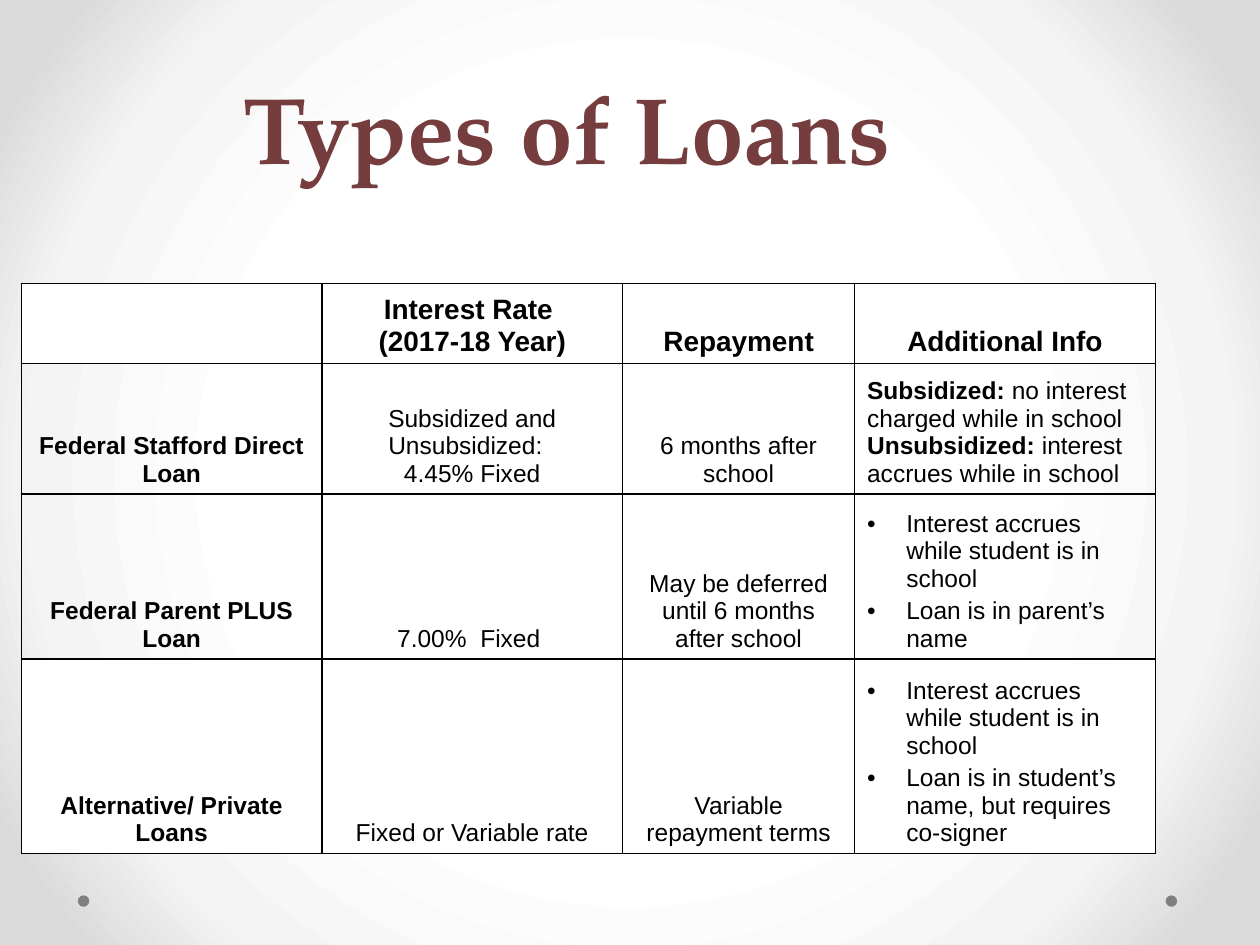
from lxml.etree import SubElement
from pptx import Presentation
from pptx.dml.color import RGBColor
from pptx.enum.shapes import MSO_SHAPE as Preset
from pptx.enum.text import MSO_ANCHOR as Anchor, PP_ALIGN as Align
from pptx.oxml import parse_xml
from pptx.oxml.ns import nsdecls, qn
from pptx.util import Cm, Pt

BLACK = RGBColor(0x00, 0x00, 0x00)
WHITE = RGBColor(0xFF, 0xFF, 0xFF)
MAROON = RGBColor(0x75, 0x3D, 0x3D)
GRAY = RGBColor(0x80, 0x80, 0x80)
PALE_GRAY = RGBColor(0xF4, 0xF4, 0xF4)
EDGE_GRAY = RGBColor(0xDA, 0xDA, 0xDA)

BACKGROUND_STOPS = [(0, WHITE), (50, WHITE), (76, PALE_GRAY), (92, EDGE_GRAY), (100, EDGE_GRAY)]
TITLE_FONT = {"name": "TeX Gyre Pagella", "size": Pt(54), "bold": True}
HEADER_FONT = {"name": "Arial", "size": Pt(16), "bold": True}
LABEL_FONT = {"name": "Arial", "size": Pt(14), "bold": True}
BODY_FONT = {"name": "Arial", "size": Pt(14), "bold": False}
CELL_FORMAT = {
    "vertical_anchor": Anchor.BOTTOM,
    "margin_left": Cm(0.25),
    "margin_right": Cm(0.25),
    "margin_top": Cm(0.13),
    "margin_bottom": Cm(0.13),
}

COLUMN_WIDTHS = [6.06, 6.06, 4.68, 6.06]
ROW_HEIGHTS = [1.51, 2.62, 3.12, 3.68]
FILLED_ROWS = (0, 3)
HEADERS = ["", "Interest Rate \n(2017-18 Year)", "Repayment", "Additional Info"]
LOANS = [
    ["Federal Stafford Direct Loan", "Subsidized and Unsubsidized:  \n4.45% Fixed",
     "6 months after school"],
    ["Federal Parent PLUS Loan", "7.00%  Fixed ", "May be deferred until 6 months after school"],
    ["Alternative/ Private Loans", "Fixed or Variable rate", "Variable repayment terms"],
]
STAFFORD_INFO = [
    ("Subsidized: ", LABEL_FONT),
    ("no interest charged while in school ", BODY_FONT),
    ("Unsubsidized:", LABEL_FONT),
    (" interest accrues while in school", BODY_FONT),
]
BULLETED_INFO = {
    2: ["Interest accrues while student is in school", "Loan is in parent’s name"],
    3: ["Interest accrues while student is in school",
        "Loan is in student’s name, but requires co-signer"],
}


def set_format(target, values):
    for name, value in values.items():
        setattr(target, name, value)


def add_text(paragraph, text, font, color=BLACK):
    for index, line in enumerate(text.split("\n")):
        if index:
            paragraph.add_line_break()
        run = paragraph.add_run()
        run.text = line
        set_format(run.font, font)
        run.font.color.rgb = color


def add_bullet(paragraph):
    paragraph.space_before = Pt(2.8)
    properties = paragraph._p.get_or_add_pPr()
    properties.set("marL", str(Cm(0.79)))
    properties.set("indent", str(-Cm(0.79)))
    SubElement(properties, qn("a:buFont")).set("typeface", "Arial")
    SubElement(properties, qn("a:buChar")).set("char", "•")


def add_borders(cell):
    properties = cell._tc.get_or_add_tcPr()
    for index, side in enumerate(("lnL", "lnR", "lnT", "lnB")):
        properties.insert(index, parse_xml(
            f'<a:{side} {nsdecls("a")} w="{Pt(1)}"><a:solidFill>'
            f'<a:srgbClr val="{BLACK}"/></a:solidFill></a:{side}>'))


def set_background(slide):
    slide.background.fill.solid()
    solid = slide.element.find(".//" + qn("p:bgPr"))[0]
    stops = "".join(f'<a:gs pos="{position * 1000}"><a:srgbClr val="{color}"/></a:gs>'
                    for position, color in BACKGROUND_STOPS)
    solid.getparent().replace(solid, parse_xml(
        f'<a:gradFill {nsdecls("a")} rotWithShape="1"><a:gsLst>{stops}</a:gsLst>'
        '<a:path path="circle"><a:fillToRect l="50000" t="50000" r="50000" b="50000"/>'
        '</a:path></a:gradFill>'))


def add_footer_dots(slide, left, top, width, size):
    for dot_left in (left, left + width - size):
        dot = slide.shapes.add_shape(Preset.OVAL, dot_left, top, size, size)
        dot.shadow.inherit = False
        dot.fill.solid()
        dot.fill.fore_color.rgb = GRAY
        dot.line.fill.background()


def add_title(slide, left, top, width, height):
    frame = slide.shapes.add_textbox(left, top, width, height).text_frame
    set_format(frame, {"word_wrap": True, "vertical_anchor": Anchor.BOTTOM})
    paragraph = frame.paragraphs[0]
    set_format(paragraph, {"alignment": Align.CENTER, "line_spacing": Pt(58)})
    add_text(paragraph, "Types of Loans", TITLE_FONT, MAROON)


def fill_info(frame, row):
    if row not in BULLETED_INFO:
        for text, font in STAFFORD_INFO:
            add_text(frame.paragraphs[0], text, font)
        return
    for index, text in enumerate(BULLETED_INFO[row]):
        paragraph = frame.add_paragraph() if index else frame.paragraphs[0]
        add_bullet(paragraph)
        add_text(paragraph, text, BODY_FONT)


def add_loan_table(slide, left, top, width, height):
    table = slide.shapes.add_table(
        len(ROW_HEIGHTS), len(COLUMN_WIDTHS), left, top, width, height).table
    set_format(table, {"first_row": False, "horz_banding": False})
    for column, column_width in zip(table.columns, COLUMN_WIDTHS):
        column.width = Cm(column_width)
    for row, row_height in zip(table.rows, ROW_HEIGHTS):
        row.height = Cm(row_height)

    for row_index, row in enumerate(table.rows):
        for cell in row.cells:
            set_format(cell, CELL_FORMAT)
            if row_index in FILLED_ROWS:
                cell.fill.solid()
                cell.fill.fore_color.rgb = WHITE
            else:
                cell.fill.background()
            add_borders(cell)

    for row_index, texts in enumerate([HEADERS] + LOANS):
        for column_index, text in enumerate(texts):
            if not text:
                continue
            label_font = BODY_FONT if column_index else LABEL_FONT
            paragraph = table.cell(row_index, column_index).text_frame.paragraphs[0]
            paragraph.alignment = Align.CENTER
            add_text(paragraph, text, label_font if row_index else HEADER_FONT)
        if row_index:
            fill_info(table.cell(row_index, 3).text_frame, row_index)


def main():
    presentation = Presentation()
    set_format(presentation, {"slide_width": Cm(25.4), "slide_height": Cm(19.05)})
    slide = presentation.slides.add_slide(presentation.slide_layouts[6])
    set_background(slide)
    add_footer_dots(slide, Cm(1.57), Cm(18.05), Cm(22.16), Cm(0.23))
    add_title(slide, Cm(0), Cm(0.64), Cm(22.86), Cm(3.18))
    add_loan_table(slide, Cm(0.43), Cm(5.71), Cm(sum(COLUMN_WIDTHS)), Cm(sum(ROW_HEIGHTS)))
    presentation.save("out.pptx")


if __name__ == "__main__":
    main()
